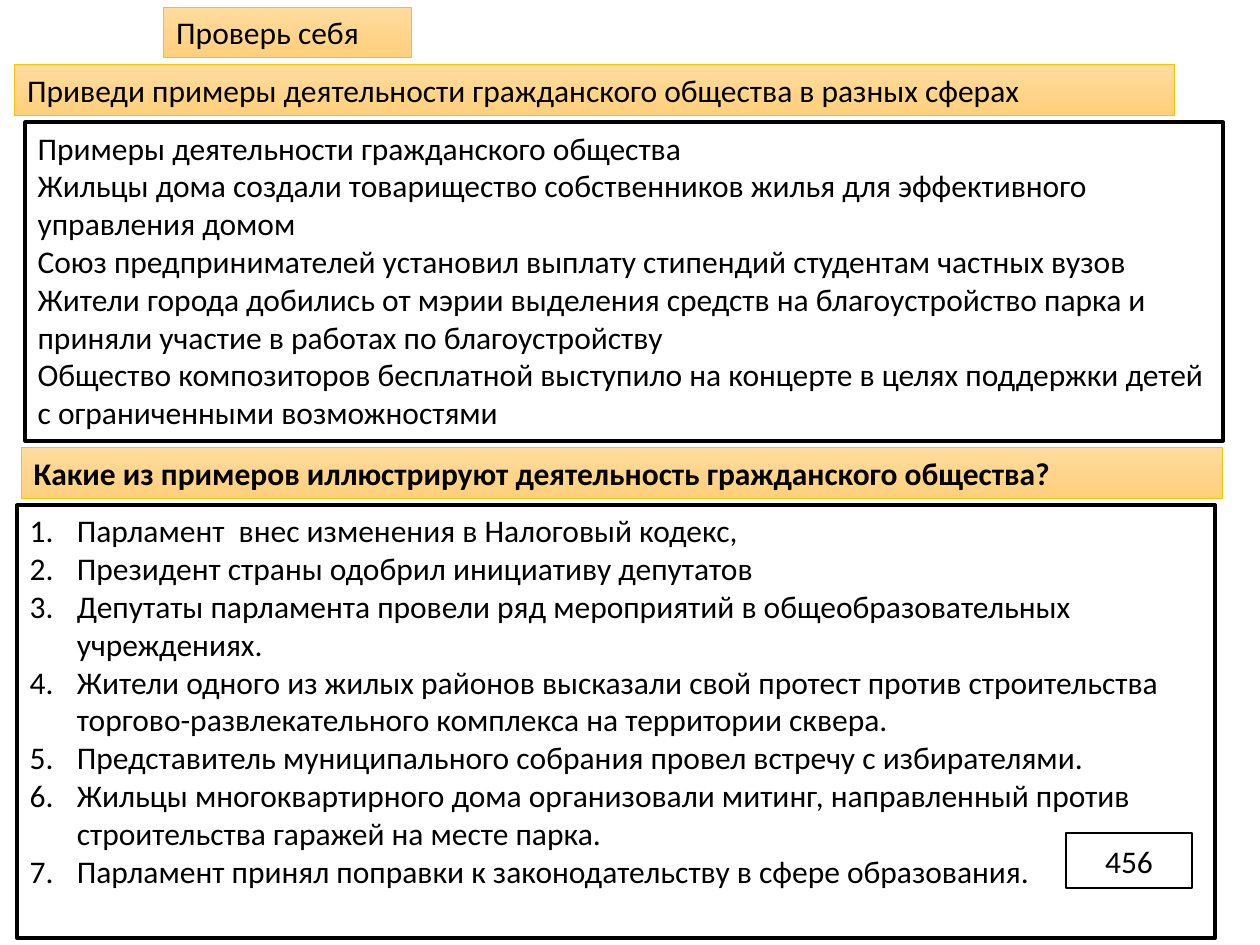
from dataclasses import dataclass

from lxml import etree
from pptx import Presentation
from pptx.dml.color import RGBColor
from pptx.enum.shapes import MSO_SHAPE
from pptx.enum.text import MSO_ANCHOR, MSO_AUTO_SIZE, PP_ALIGN
from pptx.oxml.ns import qn
from pptx.util import Pt

RECT = MSO_SHAPE.RECTANGLE
TOP, MIDDLE = MSO_ANCHOR.TOP, MSO_ANCHOR.MIDDLE
LEFT, CENTER = PP_ALIGN.LEFT, PP_ALIGN.CENTER
GROW, FIXED = MSO_AUTO_SIZE.SHAPE_TO_FIT_TEXT, MSO_AUTO_SIZE.NONE


@dataclass(frozen=True)
class Theme:
    font: str = "Calibri"
    size: int = 18
    ink: str = "000000"
    paper: str = "FFFFFF"
    light: str = "FFDB9E"
    deep: str = "FFD07C"
    gold: str = "FFC000"
    thin: float = 0.5
    fine: float = 1
    thick: float = 2.25
    indent: int = 27


class Page:
    def __init__(self, slide, theme):
        self.slide = slide
        self.theme = theme

    def box(self, area, edge, width):
        shape = self.slide.shapes.add_shape(RECT, *map(Pt, area))
        shape.shadow.inherit = False
        shape.line.color.rgb = RGBColor.from_string(edge)
        shape.line.width = Pt(width)
        return shape

    def frame(self, area, width):
        """Add a white box with a black border."""
        shape = self.box(area, self.theme.ink, width)
        shape.fill.solid()
        shape.fill.fore_color.rgb = RGBColor.from_string(self.theme.paper)
        return shape

    def label(self, shape, lines, bold=False, align=LEFT, anchor=TOP,
              fit=GROW, number=False):
        theme, text = self.theme, shape.text_frame
        text.word_wrap = True
        text.auto_size = fit
        text.vertical_anchor = anchor
        text.text = "\n".join(lines)
        for para in text.paragraphs:
            if number:
                self.number(para)
            para.alignment = align
            para.font.name = theme.font
            para.font.size = Pt(theme.size)
            para.font.bold = bold
            para.font.color.rgb = RGBColor.from_string(theme.ink)

    def number(self, para):
        props = para._p.get_or_add_pPr()
        indent = Pt(self.theme.indent)
        props.set("marL", str(indent))
        props.set("indent", str(-indent))
        etree.SubElement(props, qn("a:buFont"), typeface="+mj-lt")
        etree.SubElement(props, qn("a:buAutoNum"), type="arabicPeriod")

    def banner(self, area, line, bold=False):
        """Add a heading on a golden gradient."""
        theme = self.theme
        shape = self.box(area, theme.gold, theme.thin)
        shape.fill.gradient()
        shape.fill.gradient_angle = 270
        for stop, tint in zip(shape.fill.gradient_stops, (theme.light, theme.deep)):
            stop.color.rgb = RGBColor.from_string(tint)
        self.label(shape, [line], bold=bold)

    def panel(self, area, lines, number=False):
        shape = self.frame(area, self.theme.thick)
        self.label(shape, lines, fit=FIXED if number else GROW, number=number)

    def answer(self, area, line):
        shape = self.frame(area, self.theme.fine)
        self.label(shape, [line], align=CENTER, anchor=MIDDLE, fit=FIXED)


SAMPLES = [
    "Примеры деятельности гражданского общества",
    "Жильцы дома создали товарищество собственников жилья для эффективного управления домом",
    "Союз предпринимателей установил выплату стипендий студентам частных вузов",
    "Жители города добились от мэрии выделения средств на благоустройство парка "
    "и приняли участие в работах по благоустройству",
    "Общество композиторов бесплатной выступило на концерте в целях поддержки детей "
    "с ограниченными возможностями",
]
CHOICES = [
    "Парламент  внес изменения в Налоговый кодекс,",
    "Президент страны одобрил инициативу депутатов",
    "Депутаты парламента провели ряд мероприятий в общеобразовательных учреждениях.",
    "Жители одного из жилых районов высказали свой протест против строительства "
    "торгово-развлекательного комплекса на территории сквера.",
    "Представитель муниципального собрания провел встречу с избирателями.",
    "Жильцы многоквартирного дома организовали митинг, направленный против "
    "строительства гаражей на месте парка.",
    "Парламент принял поправки к законодательству в сфере образования.",
]


def main():
    deck = Presentation()
    deck.slide_width, deck.slide_height = Pt(720), Pt(540)
    page = Page(deck.slides.add_slide(deck.slide_layouts[6]), Theme())

    page.banner((8.4, 36.9, 663, 29.1),
                "Приведи примеры деятельности гражданского общества в разных сферах")
    page.banner((93.6, 4, 141.6, 29.1), "Проверь себя")
    page.panel((14.4, 70, 684.6, 181.8), SAMPLES)
    page.banner((12.2, 255.6, 686.4, 29.1),
                "Какие из примеров иллюстрируют деятельность гражданского общества?",
                bold=True)
    page.panel((9.8, 288.7, 684.6, 247.2), CHOICES, number=True)
    page.answer((609.2, 476, 72, 31.6), "456")

    deck.save("out.pptx")


if __name__ == "__main__":
    main()
